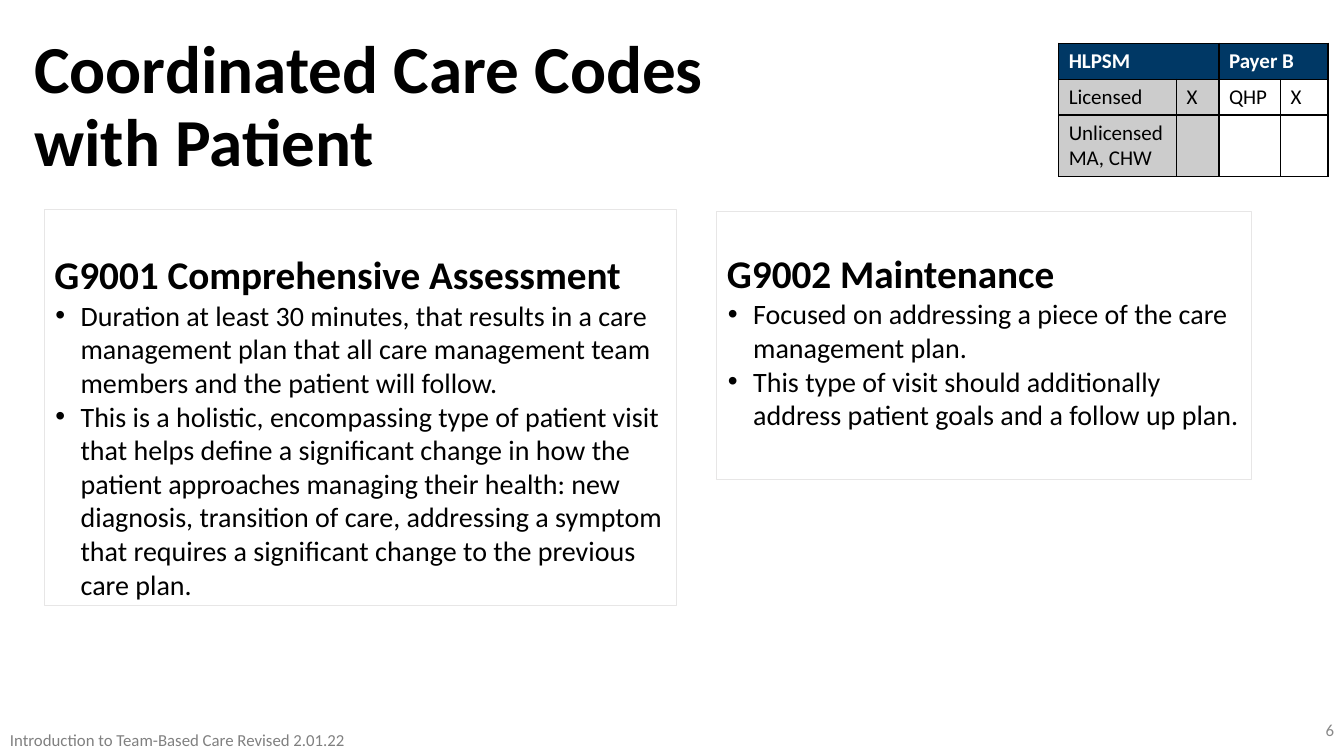
from lxml import etree
from pptx import Presentation
from pptx.dml.color import RGBColor
from pptx.enum.text import MSO_ANCHOR, MSO_AUTO_SIZE, PP_ALIGN
from pptx.oxml.ns import qn
from pptx.util import Inches, Pt

LEFT, RIGHT = PP_ALIGN.LEFT, PP_ALIGN.RIGHT
TOP, MIDDLE, BOTTOM = MSO_ANCHOR.TOP, MSO_ANCHOR.MIDDLE, MSO_ANCHOR.BOTTOM
FIXED = MSO_AUTO_SIZE.NONE
COLORS = {
    "text": "000000", "white": "FFFFFF", "navy": "003865", "grey": "CCCCCC",
    "frame": "E7E6E6", "footer": "808080", "number": "898989",
}

deck = Presentation()
deck.slide_width, deck.slide_height = Inches(13.33), Inches(7.5)
across, down = deck.slide_width / 100, deck.slide_height / 100
page = deck.slides.add_slide(deck.slide_layouts[3])


def place(box, left, top, width, height, anchor):
    box.left, box.top = int(left * across), int(top * down)
    box.width, box.height = int(width * across), int(height * down)
    frame = box.text_frame
    frame.word_wrap = True
    frame.auto_size = FIXED
    frame.vertical_anchor = anchor


def style(para, size, color, bold=False, align=LEFT, spacing=1.0):
    para.alignment = align
    para.line_spacing = spacing
    para.space_before = Pt(0)
    for span in para.runs:
        span.font.name = "Calibri"
        span.font.size = Pt(size)
        span.font.bold = bold
        span.font.color.rgb = RGBColor.from_string(COLORS[color])


title = page.shapes.title
place(title, 1.8, 4.67, 73.07, 19.33, MIDDLE)
title.text_frame.text = "Coordinated Care Codes\vwith Patient"
style(title.text_frame.paragraphs[0], 48, "text", bold=True, spacing=0.9)

code_boxes = [
    (1, (3.3, 27.73, 47.04, 52.4), 0.05, [
        "G9001 Comprehensive Assessment",
        "Duration at least 30 minutes, that results in a care management plan "
        "that all care management team members and the patient will follow.",
        "This is a holistic, encompassing type of patient visit that helps define "
        "a significant change in how the patient approaches managing their health: "
        "new diagnosis, transition of care, addressing a symptom that requires a "
        "significant change to the previous care plan.",
    ]),
    (2, (53.34, 28, 39.76, 35.47), 0.48, [
        "G9002 Maintenance",
        "Focused on addressing a piece of the care management plan.",
        "This type of visit should additionally address patient goals and a "
        "follow up plan.",
    ]),
]
for index, area, bottom_margin, lines in code_boxes:
    box = page.placeholders[index]
    place(box, *area, BOTTOM)
    box.line.color.rgb = RGBColor.from_string(COLORS["frame"])
    box.line.width = Pt(0.75)
    box.text_frame.margin_bottom = Inches(bottom_margin)
    box.text_frame.text = "\n".join(lines)
    heading, *bullets = box.text_frame.paragraphs
    style(heading, 28, "text", bold=True, spacing=0.9)
    props = heading._p.get_or_add_pPr()
    props.set("marL", "0")
    props.set("indent", "0")
    etree.SubElement(props, qn("a:buNone"))
    for para in bullets:
        style(para, 20, "text")
        props = para._p.get_or_add_pPr()
        props.set("marL", str(Inches(0.26)))
        props.set("indent", str(Inches(-0.25)))
        etree.SubElement(props, qn("a:buFont"), typeface="Arial")
        etree.SubElement(props, qn("a:buChar"), char="•")

payer_rows = [
    ["HLPSM", "", "Payer B", ""],
    ["Licensed", "X", "QHP", "X"],
    ["Unlicensed\nMA, CHW", "", "", ""],
]
column_shares = [8.78, 3.15, 4.58, 3.53]
row_shares = [4.53, 4.53, 7.87]
table = page.shapes.add_table(
    len(row_shares), len(column_shares), int(78.77 * across), int(5.73 * down),
    int(sum(column_shares) * across), int(sum(row_shares) * down)).table
table.first_row = table.horz_banding = False
for column, share in zip(table.columns, column_shares):
    column.width = int(share * across)
for row, share in zip(table.rows, row_shares):
    row.height = int(share * down)
for first in (0, 2):
    table.cell(0, first).merge(table.cell(0, first + 1))

for r, words in enumerate(payer_rows):
    for c, word in enumerate(words):
        cell = table.cell(r, c)
        header = r == 0
        fill = "navy" if header else "grey" if c < 2 else "white"
        cell.fill.solid()
        cell.fill.fore_color.rgb = RGBColor.from_string(COLORS[fill])
        props = cell._tc.get_or_add_tcPr()
        for position, side in enumerate(("a:lnL", "a:lnR", "a:lnT", "a:lnB")):
            edge = etree.Element(qn(side), w=str(Pt(1)))
            ink = etree.SubElement(edge, qn("a:solidFill"))
            etree.SubElement(ink, qn("a:srgbClr"), val=COLORS["text"])
            props.insert(position, edge)
        if word:
            cell.text_frame.text = word
            for para in cell.text_frame.paragraphs:
                style(para, 15, "white" if header else "text", bold=header)

notes = [
    ("Introduction to Team-Based Care Revised 2.01.22",
     (0, 95.87, 39.38, 4), "footer", LEFT),
    ("6", (77.49, 94.53, 22.51, 5.33), "number", RIGHT),
]
for words, area, color, align in notes:
    box = page.shapes.add_textbox(0, 0, 0, 0)
    place(box, *area, TOP)
    box.text_frame.text = words
    style(box.text_frame.paragraphs[0], 12, color, align=align)

deck.save("out.pptx")
